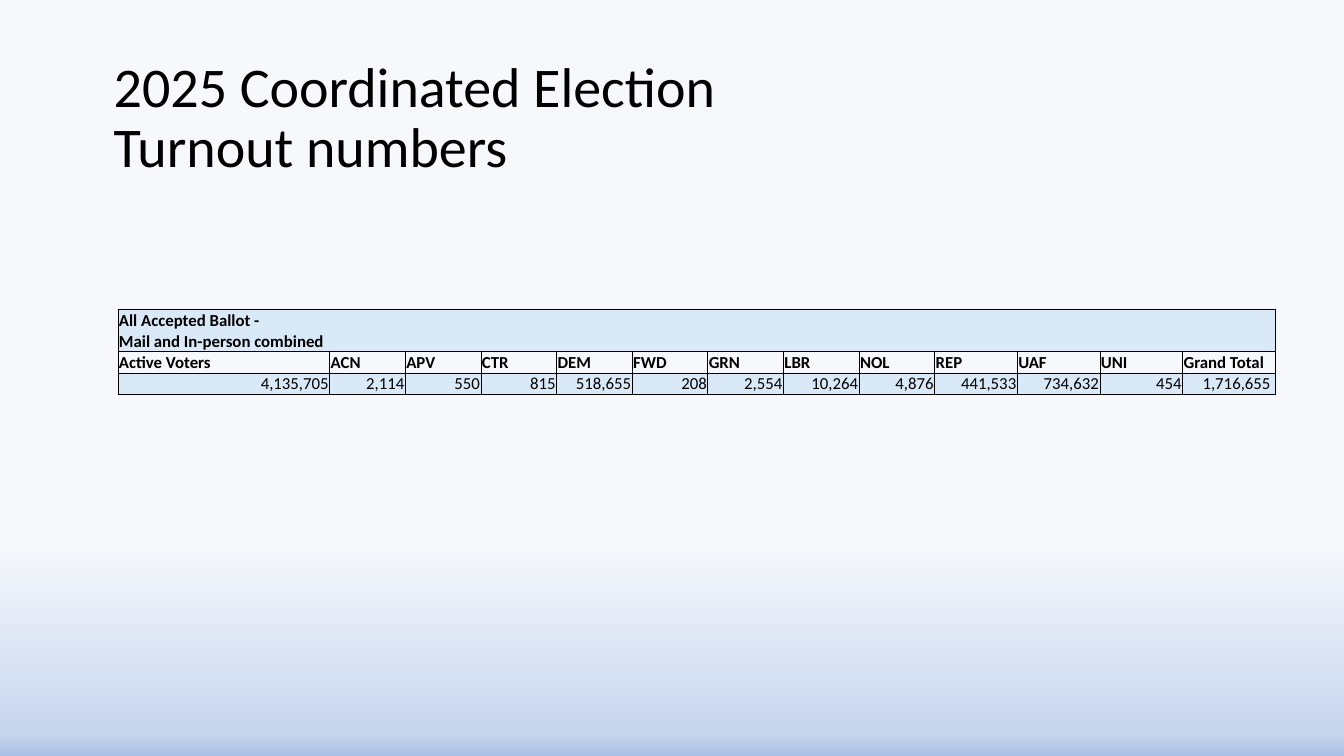
"""Build the slide with turnout numbers of the 2025 Coordinated Election."""
from dataclasses import dataclass

from lxml import etree
from pptx import Presentation
from pptx.dml.color import RGBColor
from pptx.enum.text import MSO_ANCHOR, PP_ALIGN
from pptx.oxml.ns import qn
from pptx.util import Inches, Pt

MIDDLE, BOTTOM = MSO_ANCHOR.MIDDLE, MSO_ANCHOR.BOTTOM
LEFT, RIGHT = PP_ALIGN.LEFT, PP_ALIGN.RIGHT


@dataclass(frozen=True)
class Theme:
    font: str = "Calibri"
    title_size: int = 40
    table_size: int = 12
    border_width: float = 0.5
    ink: str = "000000"
    band: str = "DAE9F8"
    background: tuple = ((72, "F6F8FC"), (97, "C7D5ED"), (100, "ABC0E4"))


theme = Theme()


def style_paragraph(para, size, bold=False, alignment=LEFT):
    para.alignment = alignment
    para.font.name = theme.font
    para.font.size = Pt(size)
    para.font.bold = bold
    para.font.color.rgb = RGBColor.from_string(theme.ink)


def set_border(cell, side, visible):
    properties = cell._tc.get_or_add_tcPr()
    line = etree.SubElement(properties, qn(f"a:ln{side}"), w=str(Pt(theme.border_width)))
    if visible:
        fill = etree.SubElement(line, qn("a:solidFill"))
        etree.SubElement(fill, qn("a:srgbClr"), val=theme.ink)
    else:
        etree.SubElement(line, qn("a:noFill"))


deck = Presentation()
deck.slide_width, deck.slide_height = Inches(13.33), Inches(7.5)
page = deck.slides.add_slide(deck.slide_layouts[6])

background = page.background.fill
background.gradient()
background.gradient_angle = 270
stops = page.element.find(f".//{qn('a:gsLst')}")
for stop in list(stops):
    stops.remove(stop)
for position, color in theme.background:
    stop = etree.SubElement(stops, qn("a:gs"), pos=str(position * 1000))
    etree.SubElement(stop, qn("a:srgbClr"), val=color)

title = page.shapes.add_textbox(Inches(1.03), Inches(0.4), Inches(11.5), Inches(1.57))
title.text_frame.word_wrap = True
title.text_frame.vertical_anchor = MIDDLE
title_para = title.text_frame.paragraphs[0]
title_para.text = "2025 Coordinated Election \vTurnout numbers"
title_para.line_spacing = 0.9
style_paragraph(title_para, theme.title_size)

turnout = [
    ("Active Voters", "4,135,705"), ("ACN", "2,114"), ("APV", "550"),
    ("CTR", "815"), ("DEM", "518,655"), ("FWD", "208"), ("GRN", "2,554"),
    ("LBR", "10,264"), ("NOL", "4,876"), ("REP", "441,533"),
    ("UAF", "734,632"), ("UNI", "454"), ("Grand Total", "1,716,655 "),
]
headers, counts = zip(*turnout)
last = len(turnout) - 1
caption = ["All Accepted Ballot - \vMail and In-person combined"] + [""] * last
rows = [caption, headers, counts]
column_widths = [2.1] + [0.75] * 8 + [0.82] * 3 + [0.92]
row_heights = [0.42, 0.21, 0.21]

table = page.shapes.add_table(
    len(rows), len(turnout), Inches(1.17), Inches(3.07),
    Inches(sum(column_widths)), Inches(sum(row_heights)),
).table
table.first_row = table.horz_banding = False
for column, width in zip(table.columns, column_widths):
    column.width = Inches(width)

for row_index, texts in enumerate(rows):
    table.rows[row_index].height = Inches(row_heights[row_index])
    is_caption, is_count = row_index == 0, row_index == 2
    for column_index, text in enumerate(texts):
        cell = table.cell(row_index, column_index)
        cell.text = text
        cell.vertical_anchor = BOTTOM
        cell.margin_left = cell.margin_right = cell.margin_top = Inches(0.01)
        cell.margin_bottom = 0
        style_paragraph(cell.text_frame.paragraphs[0], theme.table_size,
                        bold=not is_count, alignment=RIGHT if is_count else LEFT)
        set_border(cell, "L", not is_caption or column_index == 0)
        set_border(cell, "R", not is_caption or column_index == last)
        set_border(cell, "T", True)
        set_border(cell, "B", True)
        if is_caption or is_count:
            cell.fill.solid()
            cell.fill.fore_color.rgb = RGBColor.from_string(theme.band)
        else:
            cell.fill.background()

deck.save("out.pptx")
